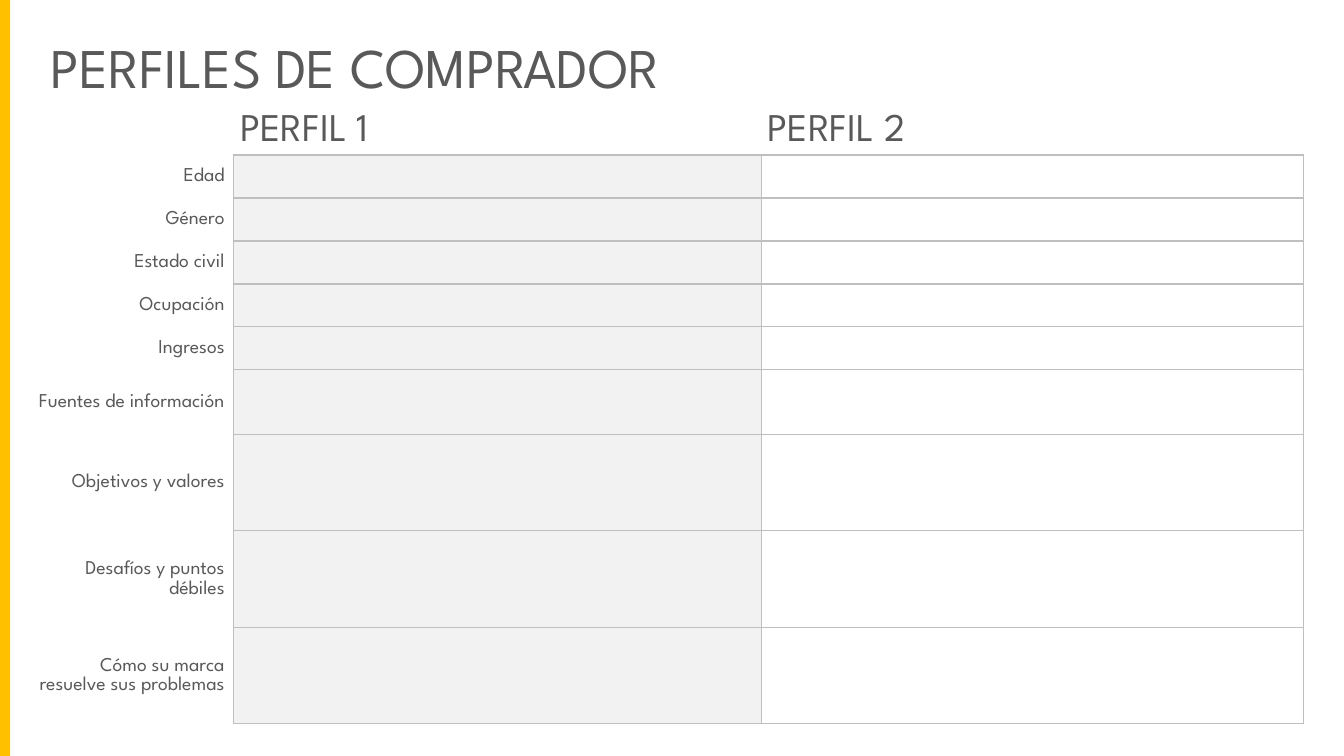
from lxml.etree import SubElement
from pptx import Presentation
from pptx.dml.color import RGBColor
from pptx.enum.shapes import MSO_SHAPE
from pptx.enum.text import MSO_ANCHOR, MSO_AUTO_SIZE, PP_ALIGN
from pptx.oxml.ns import qn
from pptx.util import Pt

FONT = "League Spartan"
TEXT_GREY = RGBColor(0x59, 0x59, 0x59)
LINE_GREY = RGBColor(0xBF, 0xBF, 0xBF)
CELL_GREY = RGBColor(0xF2, 0xF2, 0xF2)
YELLOW = RGBColor(0xFF, 0xC0, 0x00)
WHITE = RGBColor(0xFF, 0xFF, 0xFF)

PROFILES = ["PERFIL 1", "PERFIL 2"]
HEADER_HEIGHT = 35
ATTRIBUTES = [
    ("Edad", 30.7),
    ("Género", 30.7),
    ("Estado civil", 30.7),
    ("Ocupación", 30.7),
    ("Ingresos", 30.7),
    ("Fuentes de información", 45.9),
    ("Objetivos y valores", 69),
    ("Desafíos y puntos débiles", 69),
    ("Cómo su marca resuelve sus problemas", 69),
]
COLUMN_WIDTHS = [149, 376.8, 387.2]


def add_run(paragraph, text, size):
    run = paragraph.add_run()
    run.text = text
    run.font.name = FONT
    run.font.size = Pt(size)
    run.font.color.rgb = TEXT_GREY


def add_title(slide, text):
    title = slide.shapes.title
    title.left, title.top = Pt(28.8), Pt(19.4)
    title.width, title.height = Pt(789.8), Pt(55.4)
    frame = title.text_frame
    frame.auto_size = MSO_AUTO_SIZE.NONE
    frame.vertical_anchor = MSO_ANCHOR.BOTTOM
    paragraph = frame.paragraphs[0]
    paragraph.alignment = PP_ALIGN.LEFT
    paragraph.line_spacing = 1.0
    paragraph.space_before = Pt(0)
    add_run(paragraph, text, 40)


def add_side_bar(slide, height):
    bar = slide.shapes.add_shape(MSO_SHAPE.RECTANGLE, 0, 0, Pt(7.2), height)
    bar.shadow.inherit = False
    bar.fill.solid()
    bar.fill.fore_color.rgb = YELLOW
    bar.line.fill.background()


def set_borders(cell, left, right, top, bottom):
    properties = cell._tc.get_or_add_tcPr()
    sides = {"lnL": left, "lnR": right, "lnT": top, "lnB": bottom}
    for side, color in sides.items():
        line = SubElement(properties, qn(f"a:{side}"), w=str(Pt(1)))
        fill = SubElement(line, qn("a:solidFill"))
        SubElement(fill, qn("a:srgbClr"), val=str(color))


def format_cell(cell, row, column):
    """Outline the answer grid in grey and leave header and labels on white."""
    is_header, is_label = row == 0, column == 0
    set_borders(
        cell,
        left=WHITE if is_header or is_label else LINE_GREY,
        right=WHITE if is_header else LINE_GREY,
        top=WHITE if is_header or is_label else LINE_GREY,
        bottom=WHITE if is_label else LINE_GREY,
    )
    cell.fill.solid()
    cell.fill.fore_color.rgb = CELL_GREY if column == 1 and not is_header else WHITE
    cell.vertical_anchor = MSO_ANCHOR.MIDDLE
    cell.margin_top = cell.margin_bottom = 0
    cell.margin_left = Pt(4.7)
    cell.margin_right = Pt(6.5) if is_label else Pt(4.7)


def write_cell(cell, text, size, alignment):
    paragraph = cell.text_frame.paragraphs[0]
    paragraph.alignment = alignment
    paragraph.line_spacing = 1.07
    add_run(paragraph, text, size)


def add_profile_table(slide):
    heights = [HEADER_HEIGHT] + [height for _, height in ATTRIBUTES]
    frame = slide.shapes.add_table(
        len(heights), len(COLUMN_WIDTHS), Pt(18), Pt(75.7),
        Pt(sum(COLUMN_WIDTHS)), Pt(sum(heights)),
    )
    table = frame.table
    table.first_row = table.horz_banding = False
    for column, width in zip(table.columns, COLUMN_WIDTHS):
        column.width = Pt(width)
    for row, height in zip(table.rows, heights):
        row.height = Pt(height)
    for row in range(len(heights)):
        for column in range(len(COLUMN_WIDTHS)):
            format_cell(table.cell(row, column), row, column)
    for column, profile in enumerate(PROFILES, start=1):
        write_cell(table.cell(0, column), profile, 28, PP_ALIGN.LEFT)
    for row, (attribute, _) in enumerate(ATTRIBUTES, start=1):
        write_cell(table.cell(row, 0), attribute, 14, PP_ALIGN.RIGHT)


def main():
    presentation = Presentation()
    presentation.slide_width, presentation.slide_height = Pt(960), Pt(540)
    slide = presentation.slides.add_slide(presentation.slide_layouts[5])
    add_title(slide, "PERFILES DE COMPRADOR")
    add_side_bar(slide, presentation.slide_height)
    add_profile_table(slide)
    presentation.save("out.pptx")


if __name__ == "__main__":
    main()
